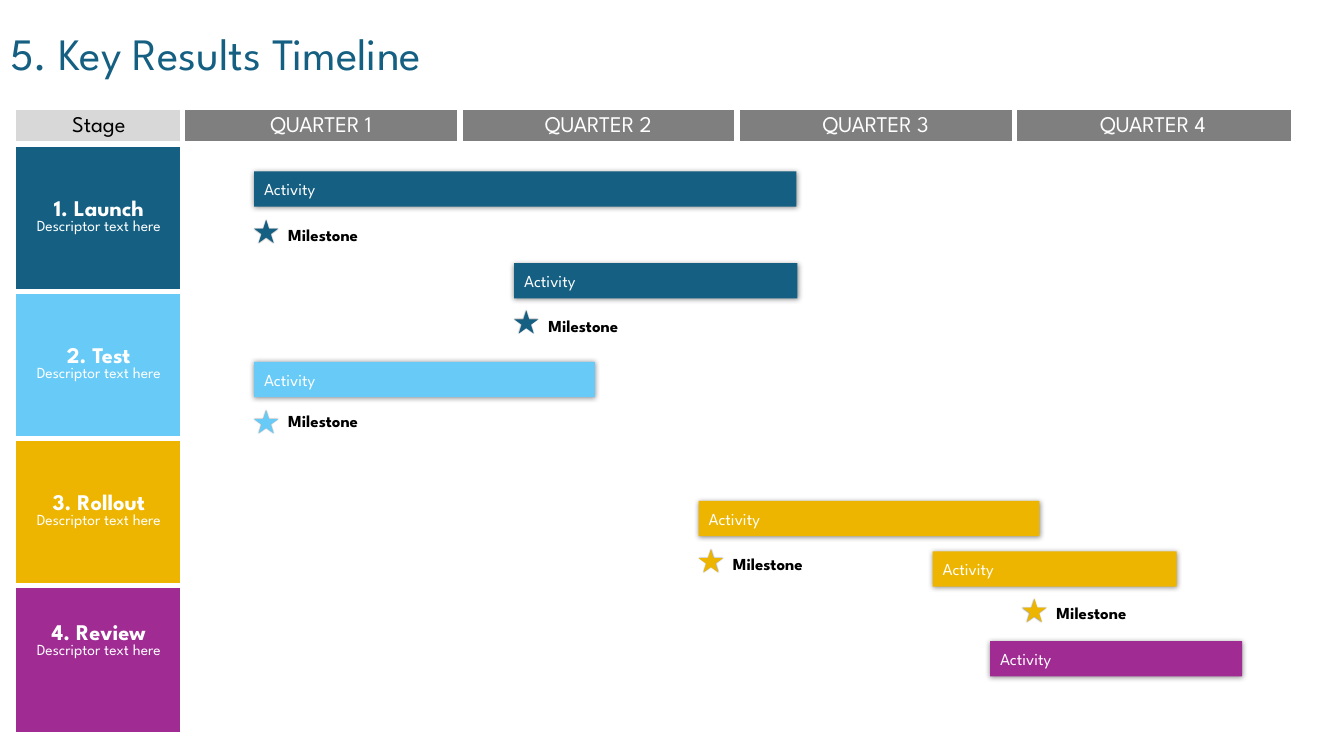
from lxml import etree
from pptx import Presentation
from pptx.dml.color import RGBColor
from pptx.enum import shapes, text
from pptx.oxml import ns
from pptx.util import Inches, Pt

FONT = "League Spartan"
COLOURS = {
    "launch": "156082", "test": "68CBF7", "rollout": "EEB500", "review": "A02B93",
    "stage": "D8D8D8", "quarter": "7F7F7F", "white": "FFFFFF", "black": "000000",
}


def write(paragraph, words, size, colour, bold=False, align=text.PP_ALIGN.LEFT):
    paragraph.alignment = align
    run = paragraph.add_run()
    run.text = words
    run.font.name = FONT
    run.font.size = Pt(size)
    run.font.bold = bold
    run.font.color.rgb = RGBColor.from_string(COLOURS[colour])


def add_block(kind, left, top, width, height, colour, blur, distance):
    """Add a filled shape without outline, with a soft shadow straight below it."""
    shape = slide.shapes.add_shape(kind, Inches(left), Inches(top), Inches(width), Inches(height))
    shape.fill.solid()
    shape.fill.fore_color.rgb = RGBColor.from_string(COLOURS[colour])
    shape.line.fill.background()
    shape.shadow.inherit = False
    effects = shape.element.spPr.find(ns.qn("a:effectLst"))
    shadow = etree.SubElement(effects, ns.qn("a:outerShdw"), blurRad=str(Pt(blur)),
                              dist=str(Pt(distance)), dir="5400000", algn="ctr", rotWithShape="0")
    shade = etree.SubElement(shadow, ns.qn("a:srgbClr"), val=COLOURS["black"])
    etree.SubElement(shade, ns.qn("a:alpha"), val="43000")
    return shape


presentation = Presentation()
presentation.slide_width = Inches(13.33)
presentation.slide_height = Inches(7.5)
slide = presentation.slides.add_slide(presentation.slide_layouts[5])

# Title
title = slide.shapes.title
title.left, title.top, title.width, title.height = Inches(0), Inches(0.21), Inches(7.6), Inches(0.64)
title.text_frame.auto_size = text.MSO_AUTO_SIZE.NONE
title.text_frame.vertical_anchor = text.MSO_ANCHOR.TOP
write(title.text_frame.paragraphs[0], "5. Key Results Timeline", 32, "launch")

# Table of stages and quarters
headers = ["Stage"] + [f"QUARTER {number}" for number in range(1, 5)]
stages = [("1. Launch", "launch"), ("2. Test", "test"),
          ("3. Rollout", "rollout"), ("4. Review", "review")]
last_row, last_column = len(stages), len(headers) - 1
table = slide.shapes.add_table(last_row + 1, last_column + 1, Inches(0.15), Inches(1.09),
                               Inches(12.65), Inches(6.22)).table
table.first_row = table.horz_banding = False
for index, column in enumerate(table.columns):
    column.width = Inches(2.75 if index else 1.66)
for index, row in enumerate(table.rows):
    row.height = Inches(1.46 if index else 0.34)

for row in range(last_row + 1):
    for column in range(last_column + 1):
        cell = table.cell(row, column)
        cell.vertical_anchor = text.MSO_ANCHOR.MIDDLE

        # White gaps between cells, thin on the outer edge
        outer_edges = {"lnL": column == 0, "lnR": column == last_column,
                       "lnT": row == 0, "lnB": row == last_row}
        for side, outer in outer_edges.items():
            if outer and column == 0:
                continue
            border = etree.SubElement(cell._tc.get_or_add_tcPr(), ns.qn(f"a:{side}"),
                                      w=str(Pt(0.75 if outer else 4.5)))
            border_fill = etree.SubElement(border, ns.qn("a:solidFill"))
            etree.SubElement(border_fill, ns.qn("a:srgbClr"), val=COLOURS["white"])

        if row == 0:
            fill = "quarter" if column else "stage"
            write(cell.text_frame.paragraphs[0], headers[column], 16,
                  "white" if column else "black", align=text.PP_ALIGN.CENTER)
        elif column == 0:
            name, fill = stages[row - 1]
            write(cell.text_frame.paragraphs[0], name, 16, "white", True, text.PP_ALIGN.CENTER)
            write(cell.text_frame.add_paragraph(), "Descriptor text here", 11, "white",
                  align=text.PP_ALIGN.CENTER)
            if row == last_row:
                cell.margin_bottom = Inches(0.39)
        elif row == last_row:
            cell.fill.background()
            continue
        else:
            fill = "white"
        cell.fill.solid()
        cell.fill.fore_color.rgb = RGBColor.from_string(COLOURS[fill])
        if fill == "white":
            shade = cell._tc.tcPr.find(ns.qn("a:solidFill"))[0]
            etree.SubElement(shade, ns.qn("a:alpha"), val="50000")

# Activities: stage, left, top, width, then milestone left, star top and label top
activities = [
    ("launch", 2.52, 1.7, 5.38, (2.52, 2.18, 2.18)),
    ("launch", 5.1, 2.61, 2.81, (5.1, 3.08, 3.08)),
    ("test", 2.52, 3.59, 3.38, (2.52, 4.07, 4.03)),
    ("rollout", 6.93, 4.97, 3.38, (6.93, 5.45, 5.44)),
    ("review", 9.82, 6.36, 2.5, None),
    ("rollout", 9.25, 5.47, 2.42, (10.14, 5.94, 5.93)),
]
for stage, left, top, width, milestone in activities:
    bar = add_block(shapes.MSO_SHAPE.RECTANGLE, left, top, width, 0.35, stage, 4, 0.5)
    bar.text_frame.vertical_anchor = text.MSO_ANCHOR.MIDDLE
    write(bar.text_frame.paragraphs[0], "Activity", 12, "white")
    if milestone:
        star_left, star_top, label_top = milestone
        add_block(shapes.MSO_SHAPE.STAR_5_POINT, star_left, star_top, 0.24, 0.23, stage, 1, 0)
        label = slide.shapes.add_textbox(Inches(star_left + 0.24), Inches(label_top),
                                         Inches(1.67), Inches(0.3))
        label.text_frame.word_wrap = True
        write(label.text_frame.paragraphs[0], "Milestone", 12, "black", True)

presentation.save("out.pptx")
